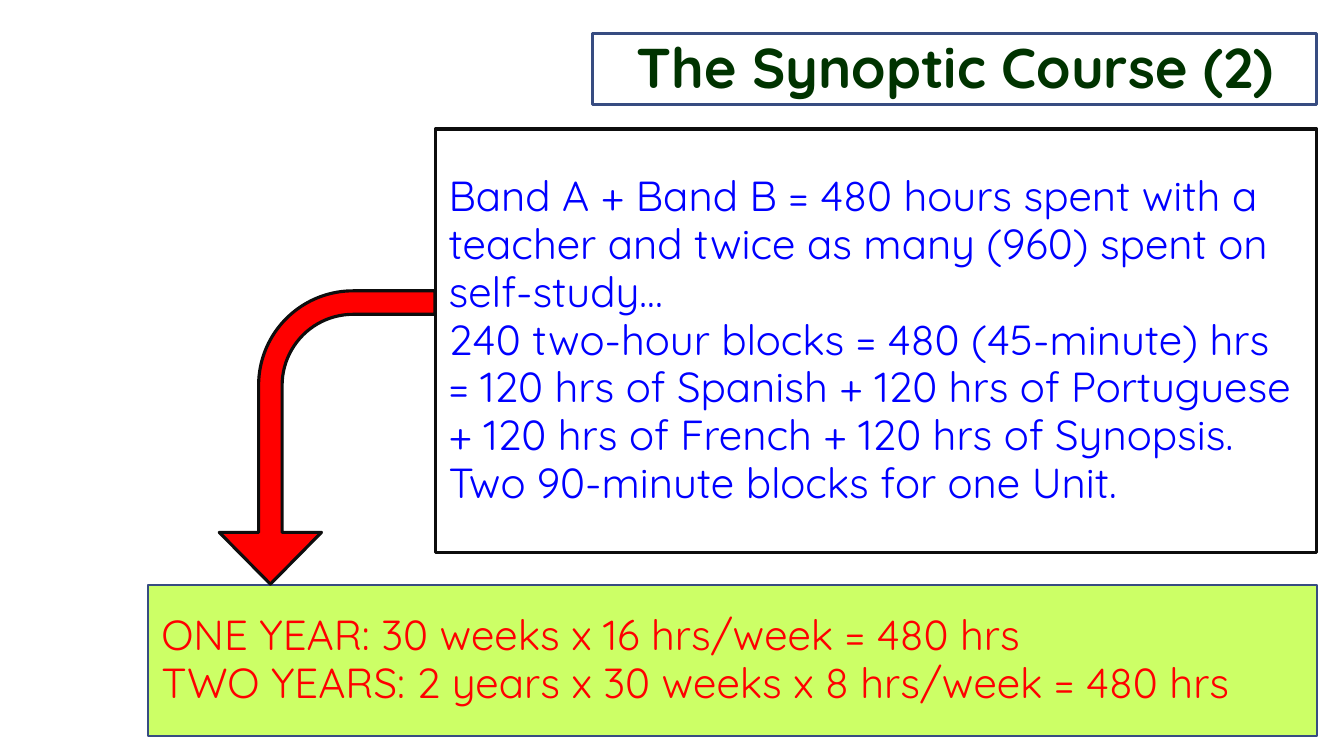
from pptx import Presentation
from pptx.dml.color import RGBColor
from pptx.enum.shapes import MSO_SHAPE
from pptx.enum.text import MSO_ANCHOR, PP_ALIGN
from pptx.util import Inches, Pt

RECT, BENT = MSO_SHAPE.RECTANGLE, MSO_SHAPE.BENT_ARROW
MIDDLE, LEFT, CENTER = MSO_ANCHOR.MIDDLE, PP_ALIGN.LEFT, PP_ALIGN.CENTER

RIGHT = 13.06
NAVY, BLACK = "374C81", "0D0D0D"

YEARS = [
    "ONE YEAR: 30 weeks x 16 hrs/week = 480 hrs",
    "TWO YEARS: 2 years x 30 weeks x 8 hrs/week = 480 hrs",
]
HOURS = [
    "Band A + Band B = 480 hours spent with a teacher and twice as many (960) spent on self-study…",
    "240 two-hour blocks = 480 (45-minute) hrs",
    "= 120 hrs of Spanish + 120 hrs of Portuguese + 120 hrs of French + 120 hrs of Synopsis. "
    "Two 90-minute blocks for one Unit.",
]
TITLE = ["The Synoptic Course (2)"]

BODY = {"size": Pt(30), "bold": False}
HEAD = {"size": Pt(40), "bold": True}

BOXES = [
    (YEARS, (1.47, 5.8, 1.5), "CCFF66", NAVY, 1.5, "FF0000", LEFT, BODY),
    (HOURS, (4.32, 1.28, 4.2), None, BLACK, 2.25, "0000FF", LEFT, BODY),
    (TITLE, (5.88, 0.33, 0.71), None, NAVY, 2.25, "003300", CENTER, HEAD),
]
ARROW = (1.79, 3.27, 2.91, 2.14)
BENDS = (0.109, 0.237, 0.24, 0.438)


def color(code):
    return RGBColor.from_string(code)


def assign(item, values):
    for name, value in values.items():
        setattr(item, name, value)


def draw(slide, kind, place, fill, line, width):
    shape = slide.shapes.add_shape(kind, *map(Inches, place))
    shape.shadow.inherit = False
    if fill:
        shape.fill.solid()
        shape.fill.fore_color.rgb = color(fill)
    else:
        shape.fill.background()
    shape.line.color.rgb = color(line)
    shape.line.width = Pt(width)
    return shape


def write(shape, lines, ink, align, style):
    frame = shape.text_frame
    assign(frame, {
        "word_wrap": True, "vertical_anchor": MIDDLE,
        "margin_left": Inches(0.13), "margin_right": Inches(0.13),
        "margin_top": Inches(0.07), "margin_bottom": Inches(0.07),
    })
    frame.text = "\n".join(lines)
    for para in frame.paragraphs:
        assign(para, {"alignment": align, "line_spacing": 0.95})
        for run in para.runs:
            assign(run.font, {"name": "Quicksand", **style})
            run.font.color.rgb = color(ink)


def main():
    deck = Presentation()
    assign(deck, {"slide_width": Inches(13.33), "slide_height": Inches(7.5)})
    slide = deck.slides.add_slide(deck.slide_layouts[6])

    for lines, (left, top, height), fill, line, width, ink, align, style in BOXES:
        place = (left, top, RIGHT - left, height)
        box = draw(slide, RECT, place, fill, line, width)
        write(box, lines, ink, align, style)

    arrow = draw(slide, BENT, ARROW, "FF0000", BLACK, 2.25)
    arrow.rotation = 270
    arrow._element.spPr.xfrm.set("flipH", "1")
    for spot, bend in enumerate(BENDS):
        arrow.adjustments[spot] = bend

    deck.save("out.pptx")


if __name__ == "__main__":
    main()
